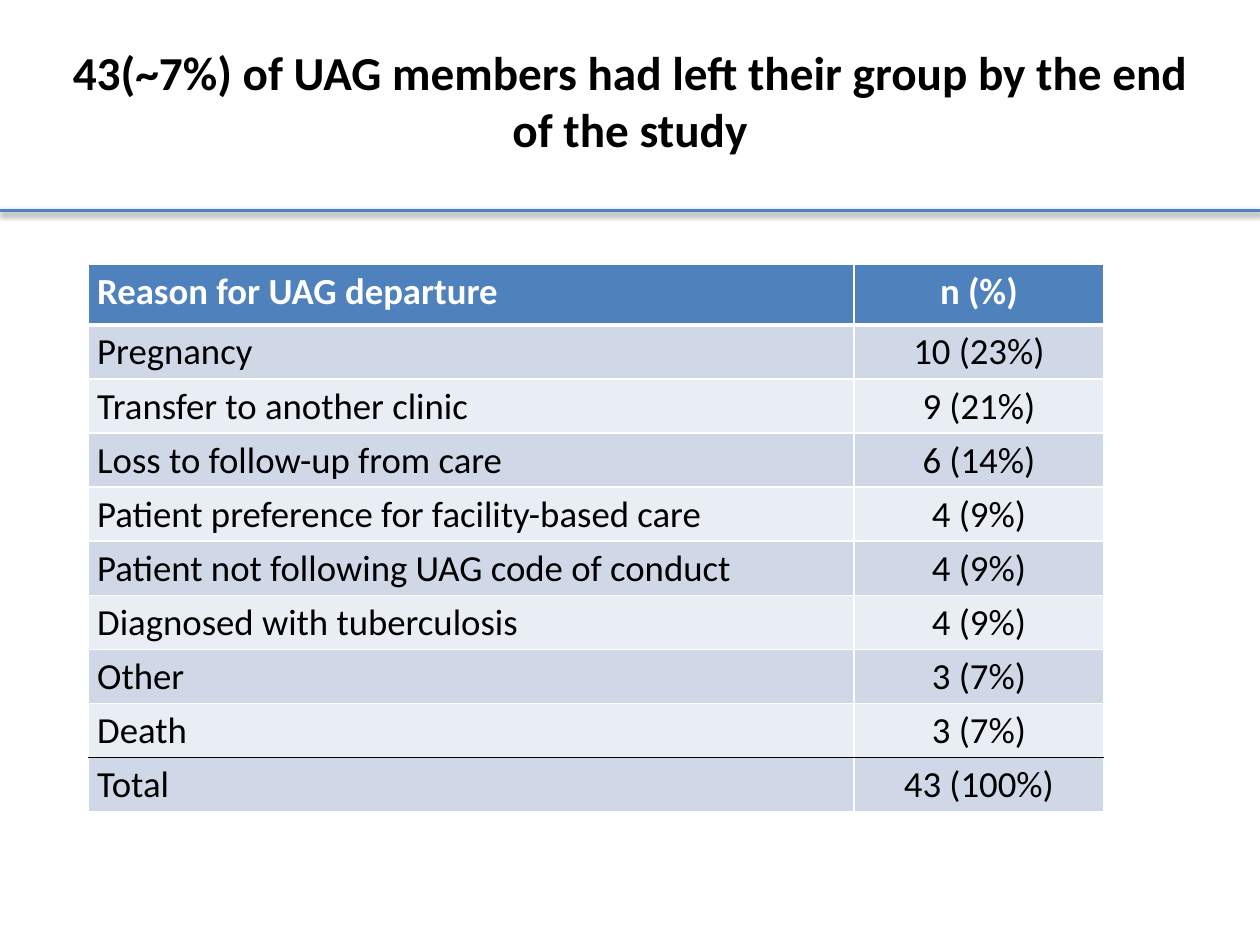
from lxml import etree
from pptx import Presentation
from pptx.dml.color import RGBColor
from pptx.enum.shapes import MSO_CONNECTOR
from pptx.enum.text import MSO_ANCHOR, PP_ALIGN
from pptx.oxml import parse_xml
from pptx.oxml.ns import qn
from pptx.util import Cm, Pt

LEFT, CENTER = PP_ALIGN.LEFT, PP_ALIGN.CENTER
MIDDLE = MSO_ANCHOR.MIDDLE
STRAIGHT = MSO_CONNECTOR.STRAIGHT
NS = 'xmlns:a="http://schemas.openxmlformats.org/drawingml/2006/main"'

BLUE, WHITE, BLACK = "4F81BD", "FFFFFF", "000000"
BANDS = ("D0D8E8", "E9EDF4")
TITLE_FONT = {"name": "Calibri", "size": Pt(27), "bold": True}
HEAD_FONT = {"name": "Calibri", "size": Pt(21), "bold": True}
BODY_FONT = {"name": "Calibri", "size": Pt(21), "bold": False}

TITLE = "43(~7%) of UAG members had left their group by the end of the study"
REASONS = [
    ("Reason for UAG departure", "n (%)"),
    ("Pregnancy", "10 (23%)"),
    ("Transfer to another clinic", "9 (21%)"),
    ("Loss to follow-up from care", "6 (14%)"),
    ("Patient preference for facility-based care", "4 (9%)"),
    ("Patient not following UAG code of conduct", "4 (9%)"),
    ("Diagnosed with tuberculosis", "4 (9%)"),
    ("Other", "3 (7%)"),
    ("Death", "3 (7%)"),
    ("Total", "43 (100%)"),
]


def rgb(color):
    return RGBColor.from_string(color)


def write(tf, text, font, color, align):
    p = tf.paragraphs[0]
    p.alignment = align
    r = p.add_run()
    r.text = text
    for name, value in font.items():
        setattr(r.font, name, value)
    r.font.color.rgb = rgb(color)


def set_border(cell, side, color, width):
    tc_pr = cell._tc.get_or_add_tcPr()
    tc_pr.append(parse_xml(
        f'<a:ln{side} {NS} w="{Pt(width)}"><a:solidFill>'
        f'<a:srgbClr val="{color}"/></a:solidFill></a:ln{side}>'))


def add_title(s, x, y, w, h):
    tf = s.shapes.add_textbox(Cm(x), Cm(y), Cm(w), Cm(h)).text_frame
    tf.word_wrap = True
    tf.vertical_anchor = MIDDLE
    write(tf, TITLE, TITLE_FONT, BLACK, CENTER)


def add_rule(s, x, y, w):
    line = s.shapes.add_connector(STRAIGHT, Cm(x), Cm(y), Cm(x + w), Cm(y))
    line.line.color.rgb = rgb(BLUE)
    line.line.width = Pt(2)
    # Soft shadow below the line
    effects = etree.SubElement(line._element.spPr, qn("a:effectLst"))
    effects.append(parse_xml(
        f'<a:outerShdw {NS} blurRad="{Pt(3.1)}" dist="{Pt(1.6)}" dir="5400000" '
        'rotWithShape="0"><a:srgbClr val="000000"><a:alpha val="38000"/>'
        '</a:srgbClr></a:outerShdw>'))


def add_reasons(s, x, y, w, h):
    head_h, count_w = 1.22, 5.03
    total = len(REASONS) - 1
    table = s.shapes.add_table(len(REASONS), 2, Cm(x), Cm(y), Cm(w), Cm(h)).table
    for column, width in zip(table.columns, (w - count_w, count_w)):
        column.width = Cm(width)
    for i, values in enumerate(REASONS):
        head = i == 0
        table.rows[i].height = Cm(head_h if head else (h - head_h) / total)
        # Thick line under the header, black line above the total
        borders = {side: (WHITE, 1) for side in "LRTB"}
        if head:
            borders["B"] = (WHITE, 3)
        elif i == 1:
            borders["T"] = (WHITE, 3)
        elif i == total - 1:
            borders["B"] = (BLACK, 1)
        elif i == total:
            borders["T"] = (BLACK, 1)
        for cell, text, align in zip(table.rows[i].cells, values, (LEFT, CENTER)):
            cell.margin_left = cell.margin_right = Cm(0.18)
            cell.margin_top = cell.margin_bottom = Cm(0.1)
            for side, (color, width) in borders.items():
                set_border(cell, side, color, width)
            cell.fill.solid()
            cell.fill.fore_color.rgb = rgb(BLUE if head else BANDS[(i - 1) % 2])
            write(cell.text_frame, text, HEAD_FONT if head else BODY_FONT,
                  WHITE if head else BLACK, align)


def main():
    prs = Presentation()
    prs.slide_width, prs.slide_height = Cm(25.4), Cm(19.05)
    s = prs.slides.add_slide(prs.slide_layouts[6])
    add_title(s, 0.99, 0.64, 23.42, 2.77)
    add_reasons(s, 1.78, 5.33, 20.47, 10.95)
    add_rule(s, 0, 4.24, 25.4)
    prs.save("out.pptx")


if __name__ == "__main__":
    main()
